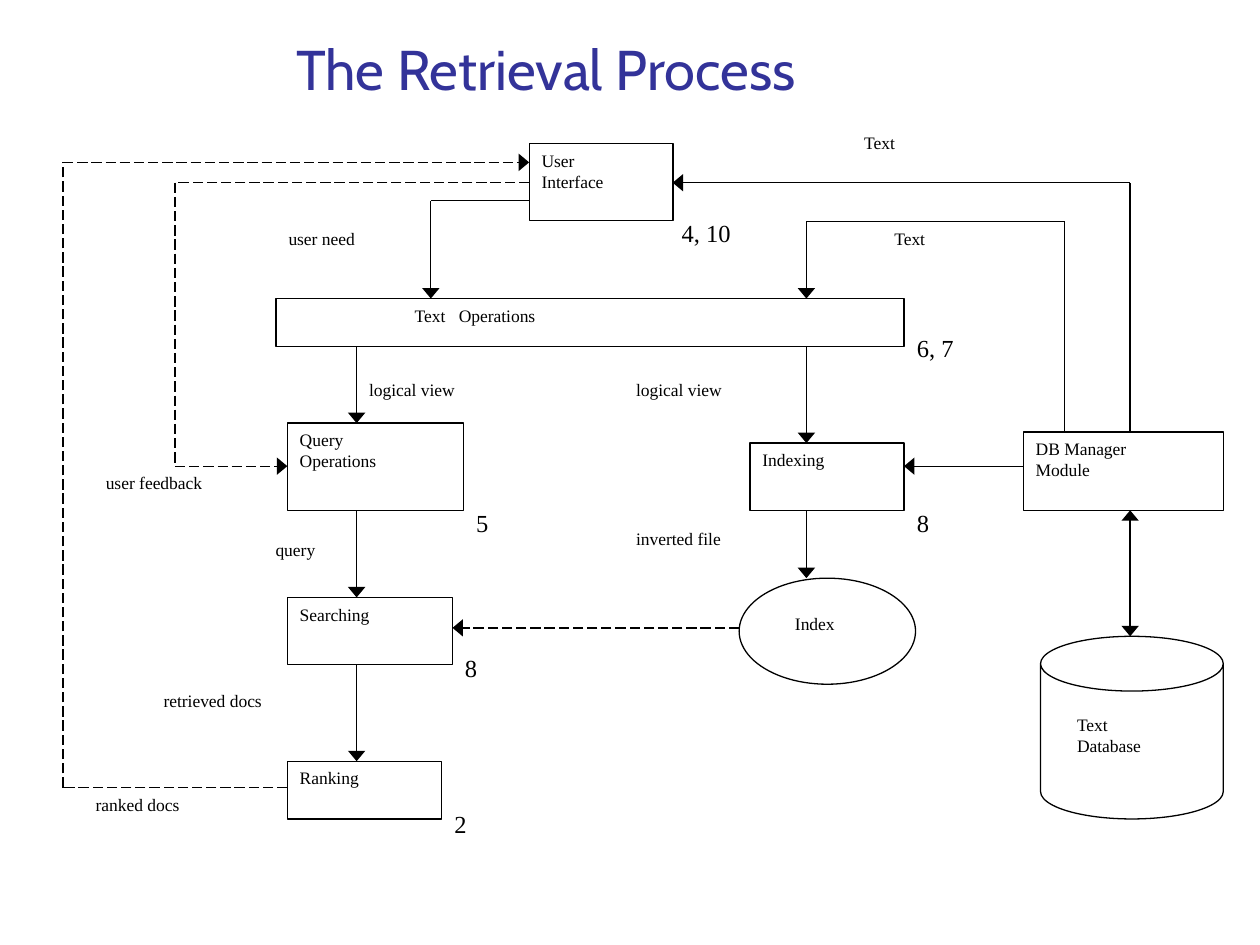
from dataclasses import dataclass
from itertools import pairwise

from lxml.etree import SubElement
from pptx import Presentation
from pptx.dml.color import RGBColor
from pptx.enum.dml import MSO_LINE
from pptx.enum.shapes import MSO_CONNECTOR, MSO_SHAPE
from pptx.enum.text import MSO_ANCHOR, PP_ALIGN
from pptx.oxml.ns import qn
from pptx.util import Pt


@dataclass
class Theme:
    ink: RGBColor = RGBColor(0, 0, 0)
    paper: RGBColor = RGBColor(255, 255, 255)
    head: RGBColor = RGBColor(0x33, 0x33, 0x99)
    serif: str = "Times New Roman"
    sans: str = "Cabin"
    title: int = 32
    note: int = 14
    body: int = 10
    line: float = 0.75


theme = Theme()


def write(shape, text, size, font=theme.serif, color=theme.ink, align=PP_ALIGN.LEFT, anchor=MSO_ANCHOR.TOP):
    frame = shape.text_frame
    frame.text = text
    frame.word_wrap = True
    frame.vertical_anchor = anchor
    for para in frame.paragraphs:
        para.alignment = align
        for run in para.runs:
            run.font.size = Pt(size)
            run.font.name = font
            run.font.color.rgb = color


def draw(kind, box, fill=None):
    shape = slide.shapes.add_shape(kind, *map(Pt, box))
    shape.shadow.inherit = False
    if fill is None:
        shape.fill.background()
    else:
        shape.fill.solid()
        shape.fill.fore_color.rgb = fill
    shape.line.color.rgb = theme.ink
    shape.line.width = Pt(theme.line)
    return shape


deck = Presentation()
deck.slide_width, deck.slide_height = Pt(720), Pt(540)
slide = deck.slides.add_slide(deck.slide_layouts[5])

title = slide.shapes.title
title.left, title.top, title.width, title.height = map(Pt, (72, 12.2, 480, 54))
write(title, "The Retrieval Process", theme.title, theme.sans, theme.head, PP_ALIGN.CENTER, MSO_ANCHOR.MIDDLE)

boxes = {
    "User\nInterface": (302.4, 82.2, 82.2, 44),
    "Text \tOperations": (157.8, 170.6, 358.8, 27.4),
    "Query\nOperations": (164.2, 241.8, 100.8, 49.8),
    "Indexing": (428.6, 253.2, 88, 38.4),
    "Searching": (164.2, 341.4, 94.4, 38.4),
    "Ranking": (164.2, 435, 88, 33),
    "DB Manager\nModule": (584.8, 246.8, 114.4, 44.8),
}
for text, box in boxes.items():
    shape = draw(MSO_SHAPE.RECTANGLE, box, theme.paper)
    write(shape, text, theme.body)
    if "\t" in text:
        shape.text_frame.margin_left = Pt(79.2)
        props = shape.text_frame.paragraphs[0]._p.get_or_add_pPr()
        stops = SubElement(props, qn("a:tabLst"))
        SubElement(stops, qn("a:tab"), pos=str(Pt(25.2)), algn="l")

draw(MSO_SHAPE.OVAL, (422.4, 330.4, 100.8, 60.6))
can = draw(MSO_SHAPE.CAN, (594.6, 363.6, 104.4, 104.4))
can.adjustments[0] = 0.3

labels = [
    ("Text", 486.8, 72), ("Text", 504, 126.8),
    ("user need", 157.8, 126.8), ("user feedback", 53.4, 266.4),
    ("logical view", 203.8, 213), ("logical view", 356.4, 213),
    ("query", 150.4, 304.6), ("inverted file", 356.4, 298),
    ("retrieved docs", 86.4, 391), ("ranked docs", 47.6, 450),
    ("Index", 447.2, 347), ("Text\nDatabase", 608.4, 404.6),
]
notes = [
    ("4, 10", 382.4, 121), ("6, 7", 516.8, 186.6), ("5", 265, 286.6),
    ("8", 516.8, 286.6), ("8", 258.6, 369.6), ("2", 252.6, 458.8),
]
for group, size in ((labels, theme.body), (notes, theme.note)):
    for text, left, top in group:
        label = slide.shapes.add_textbox(Pt(left), Pt(top), Pt(100), Pt(30))
        write(label, text, size)

query, index, data = 203.8, 460.8, 645.8
solid = [
    [(302.4, 114.6), (246.2, 114.6), (246.2, 170.6)],
    [(query, 198), (query, 241.8)],
    [(query, 291.6), (query, 341.4)],
    [(query, 379.8), (query, 435)],
    [(index, 198), (index, 253.2)],
    [(index, 291.6), (index, 330.4)],
    [(584.8, 266.4), (516.6, 266.4)],
    [(data, 246.8), (data, 104.4), (384.4, 104.4)],
    [(608.4, 246.8), (608.4, 126.6), (index, 126.6), (index, 170.6)],
    [(data, 363.6), (data, 291.6)],
]
dashed = [
    [(422.4, 358.8), (258.6, 358.8)],
    [(164.2, 450), (36, 450), (36, 92.8), (302.4, 92.8)],
    [(302.4, 104.4), (100, 104.4), (100, 266.4), (164.2, 266.4)],
]
for routes, dash in ((solid, None), (dashed, MSO_LINE.LONG_DASH)):
    for route in routes:
        for start, end in pairwise(route):
            link = slide.shapes.add_connector(MSO_CONNECTOR.STRAIGHT, *map(Pt, start + end))
            link.line.color.rgb = theme.ink
            link.line.width = Pt(theme.line)
            if dash:
                link.line.dash_style = dash
            ends = ["a:headEnd"] if route == solid[-1] else []
            if end == route[-1]:
                ends.append("a:tailEnd")
            for tag in ends:
                SubElement(link.line._get_or_add_ln(), qn(tag), type="triangle", w="lg", len="med")
            SubElement(link._element.spPr, qn("a:effectLst"))

deck.save("out.pptx")
